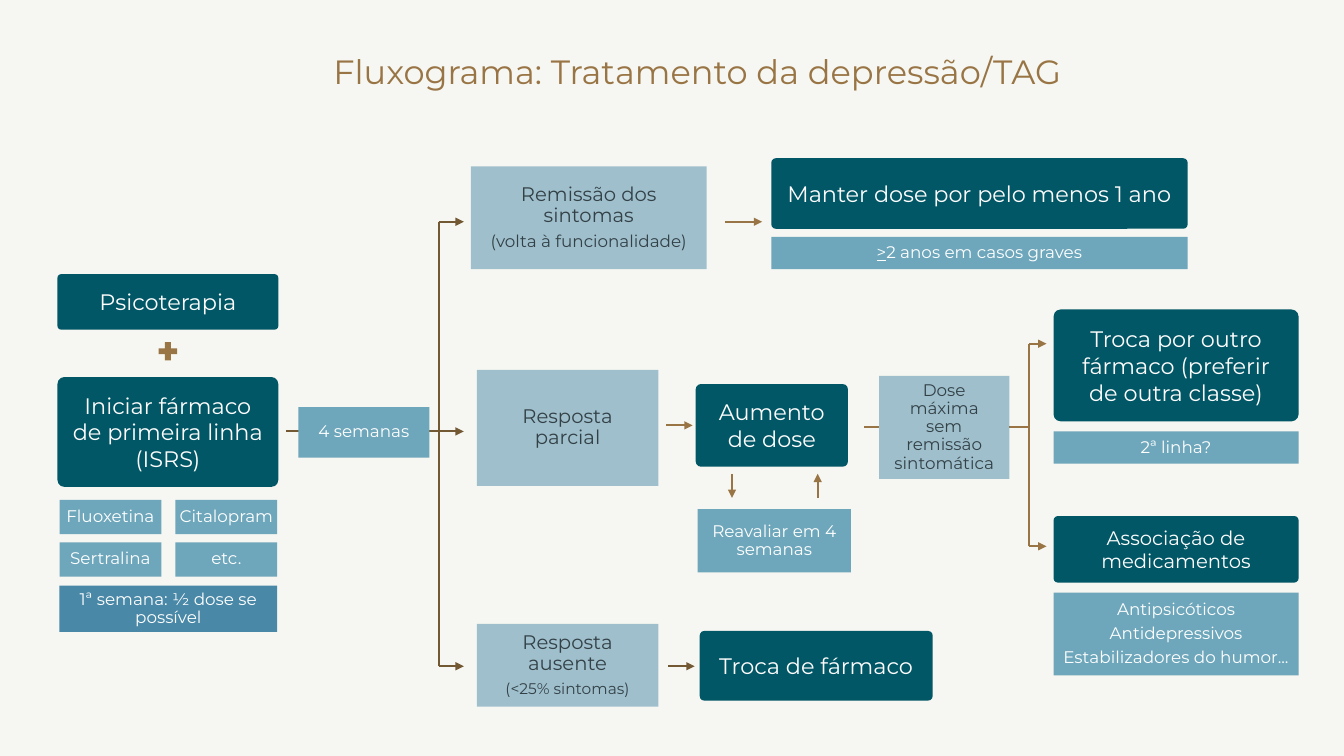
from pptx import Presentation
from pptx.dml.color import RGBColor
from pptx.enum.shapes import MSO_CONNECTOR, MSO_SHAPE
from pptx.enum.text import MSO_ANCHOR, MSO_AUTO_SIZE, PP_ALIGN
from pptx.oxml.ns import qn
from pptx.util import Inches, Pt
from lxml import etree

RECT, ROUNDED, PLUS = MSO_SHAPE.RECTANGLE, MSO_SHAPE.ROUNDED_RECTANGLE, MSO_SHAPE.MATH_PLUS
STRAIGHT, CENTER, MIDDLE = MSO_CONNECTOR.STRAIGHT, PP_ALIGN.CENTER, MSO_ANCHOR.MIDDLE
LEFT_SIDE, RIGHT_SIDE = 1, 3
FONT = "Montserrat"

CREAM = RGBColor(0xF6, 0xF7, 0xF2)
GOLD = RGBColor(0x99, 0x75, 0x45)
BROWN = RGBColor(0x73, 0x58, 0x34)
TEAL = RGBColor(0x02, 0x57, 0x66)
SKY = RGBColor(0x6E, 0xA7, 0xBB)
STEEL = RGBColor(0x49, 0x88, 0xA7)
SLATE = RGBColor(0x33, 0x41, 0x47)
WHITE = RGBColor(0xFF, 0xFF, 0xFF)

# Style: shape, fill, text colour, side inset, top inset, line spacing, gap as share of size, opacity
STEP = (ROUNDED, TEAL, WHITE, 0.1, 0.05, 1.0, 0, 100)
OUTCOME = (RECT, STEEL, SLATE, 0.12, 0.01, 0.9, 0.35, 50)
DETAIL = (RECT, SKY, WHITE, 0.01, 0.01, 0.9, 0.35, 100)
REVIEW = (RECT, SKY, WHITE, 0.12, 0.01, 0.9, 0.35, 100)
WARNING = (RECT, STEEL, WHITE, 0.01, 0.01, 0.9, 0.35, 100)

prs = Presentation()
prs.slide_width, prs.slide_height = Inches(13.33), Inches(7.5)
slide = prs.slides.add_slide(prs.slide_layouts[5])
slide.background.fill.solid()
slide.background.fill.fore_color.rgb = CREAM


def add_box(style, left, top, width, height, *lines):
    kind, fill, ink, side, edge, spacing, gap, opacity = style
    box = slide.shapes.add_shape(kind, Inches(left), Inches(top), Inches(width), Inches(height))
    box.shadow.inherit = False
    box.line.fill.background()
    box.fill.solid()
    box.fill.fore_color.rgb = fill
    if opacity < 100:
        color = box.fill._xPr.find(".//" + qn("a:srgbClr"))
        etree.SubElement(color, qn("a:alpha"), val=str(opacity * 1000))
    if kind == ROUNDED:
        box.adjustments[0] = 0.063
    frame = box.text_frame
    frame.word_wrap = True
    frame.vertical_anchor = MIDDLE
    frame.margin_left = frame.margin_right = Inches(side)
    frame.margin_top = frame.margin_bottom = Inches(edge)
    for i, (text, size) in enumerate(lines):
        line = frame.add_paragraph() if i else frame.paragraphs[0]
        line.text = text
        line.alignment = CENTER
        line.line_spacing = spacing
        line.space_after = Pt(gap * size)
        line.font.name, line.font.size, line.font.color.rgb = FONT, Pt(size), ink
    return box


def add_link(color, x1, y1, x2, y2, arrow=True):
    link = slide.shapes.add_connector(STRAIGHT, Inches(x1), Inches(y1), Inches(x2), Inches(y2))
    link.line.color.rgb = color
    link.line.width = Pt(1.5)
    if arrow:
        etree.SubElement(link.line._get_or_add_ln(), qn("a:tailEnd"), type="triangle")
    etree.SubElement(link._element.spPr, qn("a:effectLst"))
    return link


# Title
title = slide.shapes.title
title.left, title.top, title.width, title.height = Inches(1.75), Inches(0.14), Inches(10.33), Inches(1.18)
heading = title.text_frame
heading.auto_size = MSO_AUTO_SIZE.NONE
heading.vertical_anchor = MIDDLE
heading.margin_left = heading.margin_right = heading.margin_top = heading.margin_bottom = 0
heading.text = "Fluxograma: Tratamento da depressão/TAG"
heading_line = heading.paragraphs[0]
heading_line.alignment = CENTER
heading_line.line_spacing = 0.9
heading_line.font.name, heading_line.font.size, heading_line.font.color.rgb = FONT, Pt(24), GOLD

# Columns and rows of the flowchart
START, OUTCOMES, LAST = 0.57, 4.73, 10.45
FORK, FORK_2 = 4.35, 10.21
REMISSION, PARTIAL, ABSENT, MAXIMUM = 2.2, 4.28, 6.61, 4.24

# First fork: from the start to the three outcomes
add_link(BROWN, 2.84, PARTIAL, FORK, PARTIAL, arrow=False)
add_link(BROWN, FORK, ABSENT, FORK, REMISSION, arrow=False)
for row in (REMISSION, PARTIAL, ABSENT):
    add_link(BROWN, FORK, row, 4.6, row)

# From each outcome to its action
add_link(GOLD, 7.19, REMISSION, 7.56, REMISSION)
add_link(GOLD, 6.61, 4.22, 6.87, 4.22)
add_link(BROWN, 6.63, ABSENT, 6.89, ABSENT)

# Reassessment loop
add_link(GOLD, 7.26, 4.7, 7.26, 4.94)
add_link(GOLD, 8.11, 4.94, 8.11, 4.7)

# Second fork: from the maximum dose to the two alternatives
to_maximum = add_link(GOLD, 8.57, MAXIMUM, 8.72, MAXIMUM, arrow=False)
from_maximum = add_link(GOLD, 10.01, MAXIMUM, FORK_2, MAXIMUM, arrow=False)
add_link(GOLD, FORK_2, 5.42, FORK_2, 3.41, arrow=False)
for row in (3.41, 5.42):
    add_link(GOLD, FORK_2, row, 10.38, row)

# Start of treatment
add_box(STEP, START, 2.72, 2.19, 0.55, ("Psicoterapia", 16))
plus = slide.shapes.add_shape(PLUS, Inches(1.54), Inches(3.36), Inches(0.25), Inches(0.25))
plus.shadow.inherit = False
plus.fill.solid()
plus.fill.fore_color.rgb = GOLD
plus.line.fill.background()
add_box(STEP, START, 3.74, 2.19, 1.09, ("Iniciar fármaco de primeira linha", 16), ("(ISRS)", 16))
for i, drug in enumerate(("Fluoxetina", "Citalopram", "Sertralina", "etc.")):
    row, column = divmod(i, 2)
    add_box(DETAIL, 0.59 + 1.15 * column, 4.96 + 0.42 * row, 1.01, 0.34, (drug, 12))
add_box(WARNING, 0.59, 5.81, 2.16, 0.46, ("1ª semana: ½ dose se possível", 12))
add_box(DETAIL, 2.96, 4.04, 1.3, 0.5, ("4 semanas", 12))

# Remission
add_box(OUTCOME, 4.67, 1.65, 2.34, 1.02, ("Remissão dos sintomas", 14), ("(volta à funcionalidade)", 12))
add_box(STEP, 7.65, 1.57, 4.13, 0.7, ("Manter dose por pelo menos 1 ano", 16))
severe = add_box(DETAIL, 7.65, 2.35, 4.13, 0.32, (">", 12)).text_frame.paragraphs[0]
severe.runs[0].font.underline = True
severe.add_run().text = "2 anos em casos graves"

# Partial response
add_box(OUTCOME, OUTCOMES, 3.67, 1.8, 1.15, ("Resposta parcial", 14))
add_box(STEP, 6.9, 3.81, 1.51, 0.82, ("Aumento de dose", 16))
add_box(REVIEW, 6.92, 5.05, 1.52, 0.63, ("Reavaliar em 4 semanas", 12))
maximum = add_box(OUTCOME, 8.72, 3.73, 1.29, 1.02, ("Dose máxima sem remissão sintomática", 12))
to_maximum.end_connect(maximum, LEFT_SIDE)
from_maximum.begin_connect(maximum, RIGHT_SIDE)

# Alternatives after the maximum dose
add_box(STEP, LAST, 3.07, 2.43, 1.11, ("Troca por outro fármaco (preferir de outra classe)", 16))
add_box(DETAIL, LAST, 4.28, 2.43, 0.32, ("2ª linha?", 12))
add_box(STEP, LAST, 5.12, 2.43, 0.66, ("Associação de medicamentos", 14))
add_box(DETAIL, LAST, 5.88, 2.43, 0.82,
        ("Antipsicóticos", 12), ("Antidepressivos", 12), ("Estabilizadores do humor...", 12))

# No response
add_box(OUTCOME, OUTCOMES, 6.19, 1.8, 0.82, ("Resposta ausente", 14), ("(<25% sintomas)", 11))
add_box(STEP, 6.94, 6.26, 2.31, 0.69, ("Troca de fármaco", 16))

prs.save("out.pptx")
